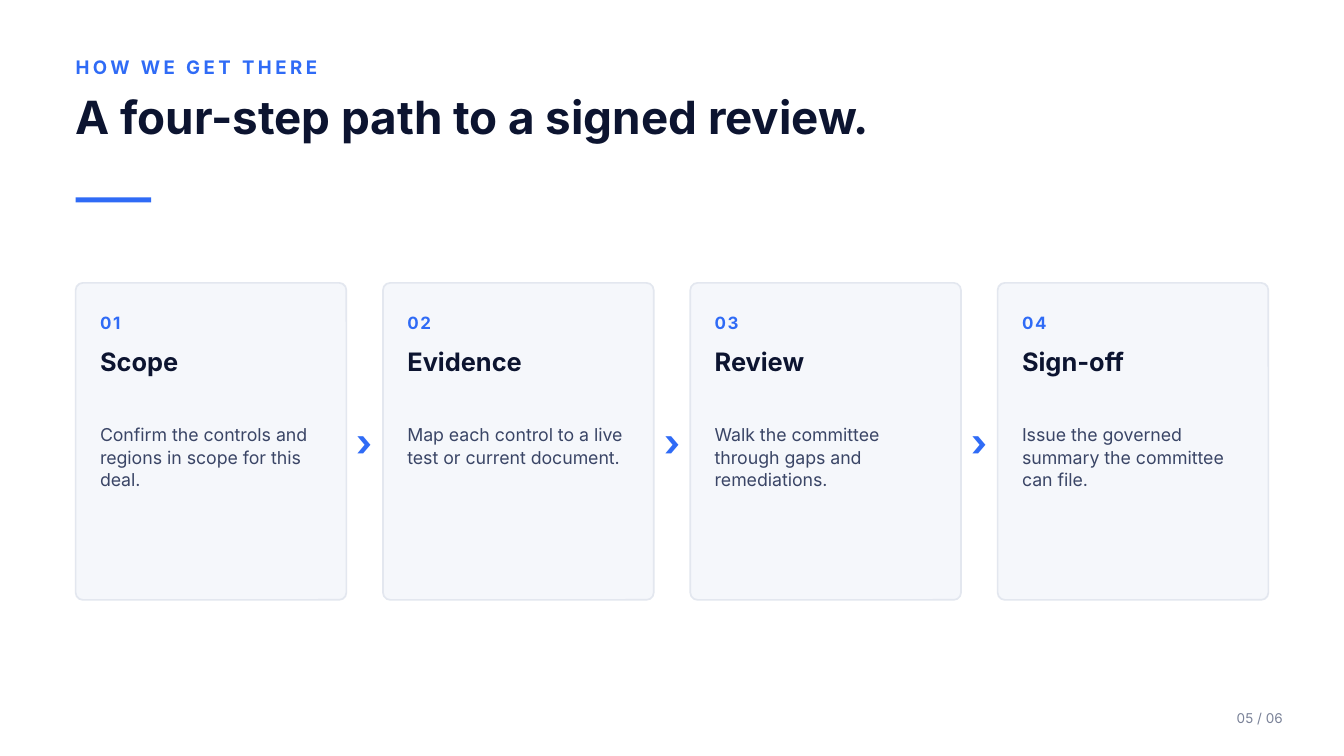
from pptx import Presentation
from pptx.dml.color import RGBColor
from pptx.enum.shapes import MSO_SHAPE as Shape
from pptx.enum.text import MSO_ANCHOR as Anchor, PP_ALIGN as Align
from pptx.util import Inches, Pt

WHITE = RGBColor(0xFF, 0xFF, 0xFF)
BLUE = RGBColor(0x2F, 0x6B, 0xF6)
NAVY = RGBColor(0x0C, 0x14, 0x30)
SLATE = RGBColor(0x3A, 0x45, 0x66)
GRAY = RGBColor(0x7A, 0x82, 0x98)
CARD_FILL = RGBColor(0xF5, 0xF7, 0xFB)
CARD_LINE = RGBColor(0xE3, 0xE7, 0xEF)

FONT = "Inter"
LEFT = 0.62
HEADER_WIDTH = 9.78
CARD_TOP, CARD_WIDTH, CARD_HEIGHT = 2.32, 2.22, 2.6
CARD_GAP = 0.3
CARD_PADDING = 0.2
ARROW_WIDTH, ARROW_HEIGHT = 0.38, 0.5

# Text styles: font attributes
EYEBROW = {"size": Pt(11), "bold": True}
TITLE = {"size": Pt(27), "bold": True}
NUMBER = {"size": Pt(10), "bold": True}
HEADING = {"size": Pt(15), "bold": True}
BODY = {"size": Pt(10.5)}
ARROW = {"size": Pt(22), "bold": True}
PAGE = {"size": Pt(8)}

STEPS = [
    ("Scope", "Confirm the controls and regions in scope for this deal."),
    ("Evidence", "Map each control to a live test or current document."),
    ("Review", "Walk the committee through gaps and remediations."),
    ("Sign-off", "Issue the governed summary the committee can file."),
]


def add_text(slide, text, box, style, color, anchor=Anchor.TOP,
             align=Align.LEFT, line_spacing=None, tracking=None):
    """Add a text box without margins; tracking is in points."""
    frame = slide.shapes.add_textbox(*map(Inches, box)).text_frame
    frame_format = {"word_wrap": True, "vertical_anchor": anchor,
                    "margin_left": 0, "margin_right": 0,
                    "margin_top": 0, "margin_bottom": 0}
    for name, value in frame_format.items():
        setattr(frame, name, value)
    paragraph = frame.paragraphs[0]
    paragraph.alignment = align
    paragraph.line_spacing = line_spacing
    run = paragraph.add_run()
    run.text = text
    for name, value in {"name": FONT, **style}.items():
        setattr(run.font, name, value)
    run.font.color.rgb = color
    if tracking:
        run._r.get_or_add_rPr().set("spc", str(tracking * 100))


def add_block(slide, kind, box, fill, line=None):
    """Add a filled shape, outlined only if a line colour is given."""
    shape = slide.shapes.add_shape(kind, *map(Inches, box))
    shape.shadow.inherit = False
    shape.fill.solid()
    shape.fill.fore_color.rgb = fill
    if line is None:
        shape.line.fill.background()
    else:
        shape.line.color.rgb = line
        shape.line.width = Pt(1)
    return shape


def add_header(slide):
    add_text(slide, "HOW WE GET THERE", (LEFT, 0.42, HEADER_WIDTH, 0.26),
             EYEBROW, BLUE, anchor=Anchor.MIDDLE, tracking=2)
    add_text(slide, "A four-step path to a signed review.",
             (LEFT, 0.72, HEADER_WIDTH, 0.95), TITLE, NAVY, line_spacing=1.02)
    add_block(slide, Shape.RECTANGLE, (LEFT, 1.62, 0.62, 0.04), BLUE)


def add_step(slide, left, number, heading, body):
    card = add_block(slide, Shape.ROUNDED_RECTANGLE,
                     (left, CARD_TOP, CARD_WIDTH, CARD_HEIGHT),
                     CARD_FILL, CARD_LINE)
    card.adjustments[0] = 0.027
    text_left = left + CARD_PADDING
    text_width = CARD_WIDTH - 2 * CARD_PADDING
    add_text(slide, f"{number:02}",
             (text_left, CARD_TOP + 0.2, text_width, 0.26),
             NUMBER, BLUE, anchor=Anchor.MIDDLE, tracking=1)
    add_text(slide, heading, (text_left, CARD_TOP + 0.52, text_width, 0.6),
             HEADING, NAVY)
    add_text(slide, body, (text_left, CARD_TOP + 1.15, text_width, 1.3),
             BODY, SLATE, line_spacing=1.05)


def add_arrow(slide, card_left):
    """Centre an arrow in the gap after a card."""
    left = card_left + CARD_WIDTH + (CARD_GAP - ARROW_WIDTH) / 2
    top = CARD_TOP + (CARD_HEIGHT - ARROW_HEIGHT) / 2
    add_text(slide, "›", (left, top, ARROW_WIDTH, ARROW_HEIGHT),
             ARROW, BLUE, anchor=Anchor.MIDDLE, align=Align.CENTER)


def main():
    presentation = Presentation()
    presentation.slide_width = Inches(11.02)
    presentation.slide_height = Inches(6.2)
    slide = presentation.slides.add_slide(presentation.slide_layouts[6])
    slide.background.fill.solid()
    slide.background.fill.fore_color.rgb = WHITE

    add_header(slide)

    # Step cards with arrows between them
    for index, (heading, body) in enumerate(STEPS):
        left = LEFT + index * (CARD_WIDTH + CARD_GAP)
        add_step(slide, left, index + 1, heading, body)
        if index < len(STEPS) - 1:
            add_arrow(slide, left)

    # Page number
    add_text(slide, "05 / 06", (9.52, 5.78, 1, 0.22), PAGE, GRAY,
             anchor=Anchor.MIDDLE, align=Align.RIGHT)

    presentation.save("out.pptx")


if __name__ == "__main__":
    main()
